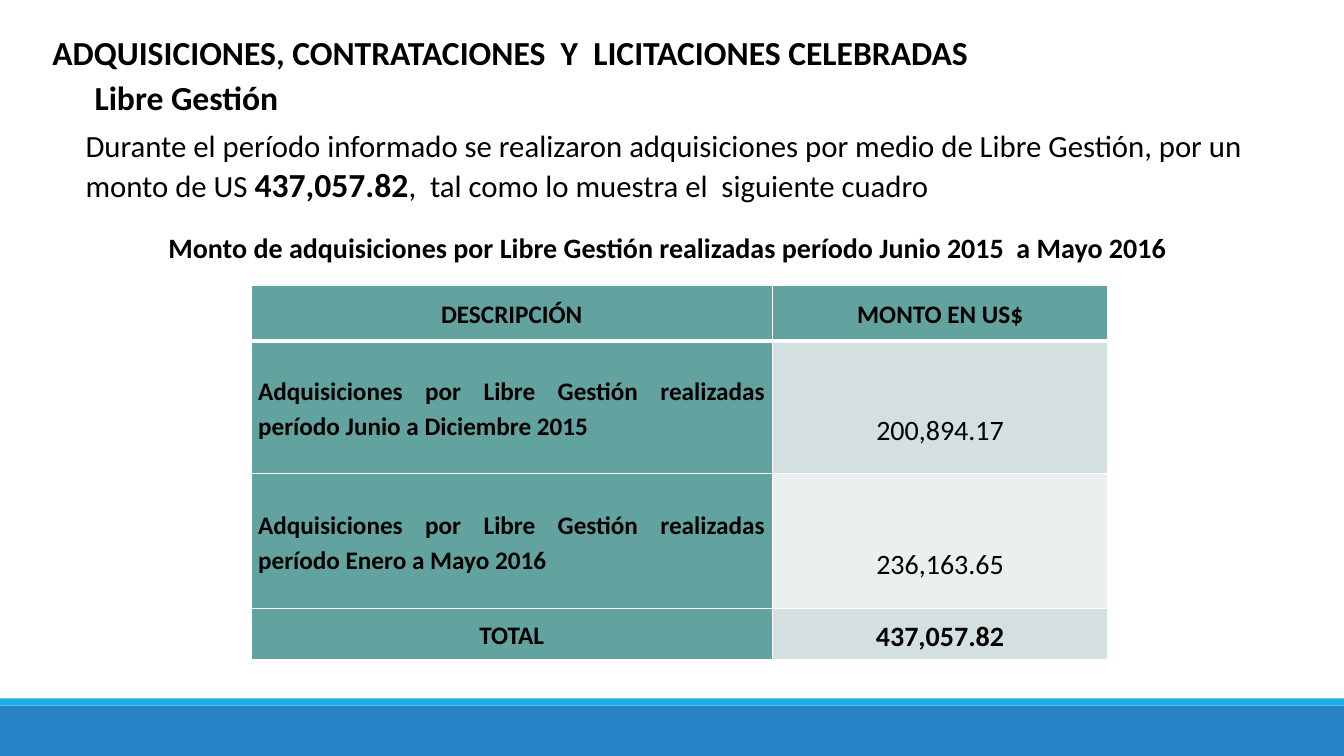
from lxml import etree
from pptx import Presentation
from pptx.dml.color import RGBColor
from pptx.enum import shapes, text
from pptx.oxml import ns
from pptx.util import Inches, Pt

BLACK, WHITE = "000000", "FFFFFF"
TEAL, PALE, PALER = "62A39F", "D3E0DF", "EAF0F0"
LEFT, CENTER, JUSTIFY = (
    text.PP_ALIGN.LEFT, text.PP_ALIGN.CENTER, text.PP_ALIGN.JUSTIFY)


def color(value):
    return RGBColor.from_string(value)


def set_all(target, values):
    for name, value in values.items():
        setattr(target, name, value)


def write(frame, runs, align=LEFT, spacing=1.0):
    paragraph = frame.paragraphs[0]
    set_all(paragraph, {"alignment": align, "line_spacing": spacing})
    for content, size, bold in runs:
        run = paragraph.add_run()
        run.text = content
        set_all(run.font, {"name": "Calibri", "size": Pt(size), "bold": bold})
        run.font.color.rgb = color(BLACK)


def add_text(slide, box, runs, align=LEFT, wrap=True):
    shape = slide.shapes.add_textbox(*map(Inches, box))
    shape.text_frame.word_wrap = wrap
    write(shape.text_frame, runs, align)


def add_bar(slide, top, height, fill):
    shape = slide.shapes.add_shape(
        shapes.MSO_SHAPE.RECTANGLE, 0, Inches(top), Inches(13.33), Inches(height))
    shape.shadow.inherit = False
    shape.fill.solid()
    shape.fill.fore_color.rgb = color(fill)
    shape.line.fill.background()


def add_border(cell, side, width):
    properties = cell._tc.get_or_add_tcPr()
    line = etree.SubElement(properties, ns.qn(f"a:ln{side}"), w=str(Pt(width)))
    fill = etree.SubElement(line, ns.qn("a:solidFill"))
    etree.SubElement(fill, ns.qn("a:srgbClr"), val=WHITE)


def format_cell(cell, row, fill, top_margin):
    widths = {"L": 1, "R": 1, "T": 3 if row == 1 else 1, "B": 3 if row == 0 else 1}
    for side, width in widths.items():
        add_border(cell, side, width)
    cell.fill.solid()
    cell.fill.fore_color.rgb = color(fill)
    set_all(cell, {
        "margin_left": Inches(0.07), "margin_right": Inches(0.07),
        "margin_top": Inches(top_margin), "margin_bottom": 0,
        "vertical_anchor": text.MSO_ANCHOR.MIDDLE})


def add_amounts_table(slide):
    purchases = "Adquisiciones por Libre Gestión realizadas período "
    rows = [
        (0.55, ("DESCRIPCIÓN", 18, True), CENTER, ("MONTO EN US$", 18, True), TEAL, 0),
        (1.32, (purchases + "Junio a Diciembre 2015", 18, True), JUSTIFY,
         ("200,894.17", 20, False), PALE, 0.42),
        (1.34, (purchases + "Enero a Mayo 2016", 18, True), JUSTIFY,
         ("236,163.65", 20, False), PALER, 0.42),
        (0.5, ("TOTAL", 18, True), CENTER, ("437,057.82", 20, True), PALE, 0),
    ]
    table = slide.shapes.add_table(
        len(rows), 2, Inches(2.49), Inches(2.83), Inches(8.5), Inches(3.71)).table
    for column, width in zip(table.columns, (5.17, 3.33)):
        column.width = Inches(width)
    for index, (height, label, align, amount, fill, top_margin) in enumerate(rows):
        table.rows[index].height = Inches(height)
        label_cell, amount_cell = table.rows[index].cells
        format_cell(label_cell, index, TEAL, 0)
        write(label_cell.text_frame, [label], align, 1.15)
        format_cell(amount_cell, index, fill, top_margin)
        write(amount_cell.text_frame, [amount], CENTER, 1.15)


def main():
    presentation = Presentation()
    set_all(presentation, {"slide_width": Inches(13.33), "slide_height": Inches(7.5)})
    slide = presentation.slides.add_slide(presentation.slide_layouts[6])
    add_bar(slide, 7, 0.5, "2683C6")
    add_bar(slide, 6.93, 0.07, "1CADE4")
    add_text(slide, (0.42, 0.27, 9.68, 0.5), [
        ("ADQUISICIONES, CONTRATACIONES  Y  LICITACIONES CELEBRADAS", 24, True)])
    add_text(slide, (0.84, 0.71, 2.04, 0.5), [("Libre Gestión", 24, True)], wrap=False)
    add_text(slide, (0.75, 1.21, 12.49, 0.88), [
        ("Durante el período informado se realizaron adquisiciones por medio de "
         "Libre Gestión, por un monto de US ", 22, False),
        ("437,057.82", 24, True),
        (",  tal como lo muestra el  siguiente cuadro", 22, False)])
    add_text(slide, (0.84, 2.24, 11.56, 0.44), [
        ("Monto de adquisiciones por Libre Gestión realizadas período "
         "Junio 2015  a Mayo 2016", 20, True)], CENTER)
    add_amounts_table(slide)
    presentation.save("out.pptx")


if __name__ == "__main__":
    main()
